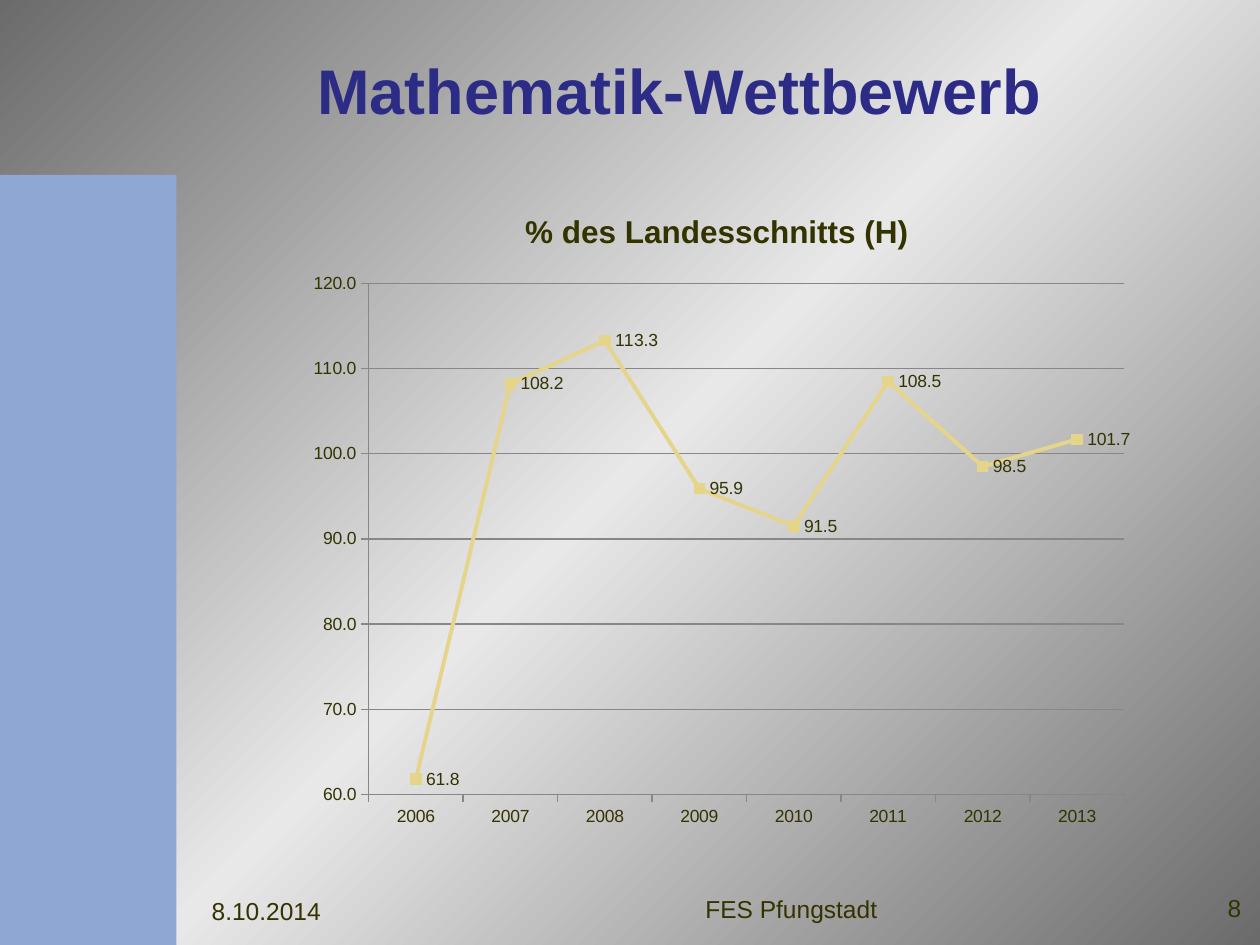
"""Slide with a line chart of mathematics competition results by year."""
from copy import deepcopy
from dataclasses import dataclass

from lxml.etree import SubElement
from pptx import Presentation
from pptx.chart.data import CategoryChartData
from pptx.dml.color import RGBColor
from pptx.enum.chart import XL_CHART_TYPE as Chart
from pptx.enum.chart import XL_LABEL_POSITION as LabelPos
from pptx.enum.chart import XL_MARKER_STYLE as Marker
from pptx.enum.chart import XL_TICK_MARK as Tick
from pptx.enum.shapes import MSO_SHAPE as Shape
from pptx.enum.text import MSO_ANCHOR as Anchor
from pptx.enum.text import PP_ALIGN as Align
from pptx.oxml.ns import qn
from pptx.util import Pt


@dataclass(frozen=True)
class Theme:
    font: str = "Arial"
    text: str = "333300"
    heading: str = "2C2C86"
    sidebar: str = "8FA7D3"
    series: str = "E5D58A"
    grid: str = "878787"
    bg_edge: str = "6B6B6B"
    bg_middle: str = "E8E8E8"
    heading_pt: int = 36
    chart_title_pt: int = 18
    footer_pt: int = 14
    chart_pt: int = 10


@dataclass(frozen=True)
class Box:
    left: float
    top: float
    width: float
    height: float

    def emu(self) -> tuple:
        return Pt(self.left), Pt(self.top), Pt(self.width), Pt(self.height)


@dataclass(frozen=True)
class Label:
    text: str
    box: Box
    size: int
    color: str
    align: Align = Align.LEFT
    bold: bool = False
    indent: float = 0


THEME = Theme()
SIDEBAR = Box(0, 100, 100.8, 440)
CHART_BOX = Box(167, 105.84, 485.3, 374.4)
PLOT = {"x": 0.09, "y": 0.15, "w": 0.89, "h": 0.78}
LABELS = (
    Label("8.10.2014", Box(113.9, 501.1, 144, 38.9), THEME.footer_pt, THEME.text),
    Label("FES Pfungstadt", Box(334.1, 499.7, 236.2, 38.9), THEME.footer_pt,
          THEME.text, Align.CENTER),
    Label("8", Box(612, 499, 104.4, 39.6), THEME.footer_pt, THEME.text, Align.RIGHT),
    Label("Mathematik-Wettbewerb", Box(102.2, 5.8, 599.8, 90), THEME.heading_pt,
          THEME.heading, bold=True, indent=72),
)
SERIES_NAME = "% des Landesschnitts (H)"
RESULTS = {"2006": 61.8, "2007": 108.2, "2008": 113.3, "2009": 95.9,
           "2010": 91.5, "2011": 108.5, "2012": 98.5, "2013": 101.7}


def rgb(value: str) -> RGBColor:
    return RGBColor.from_string(value)


def style_font(font, size: int, color: str, bold: bool = False) -> None:
    font.name, font.size, font.bold = THEME.font, Pt(size), bold
    font.color.rgb = rgb(color)


def style_line(line, color: str, width: float) -> None:
    line.color.rgb = rgb(color)
    line.width = Pt(width)


def paint_background(s) -> None:
    fill = s.background.fill
    fill.gradient()
    fill.gradient_angle = 315
    first, middle = fill.gradient_stops
    first.color.rgb, first.position = rgb(THEME.bg_edge), 0
    middle.color.rgb, middle.position = rgb(THEME.bg_middle), 0.5
    stops = next(s.element.iter(qn("a:gsLst")))
    last = deepcopy(stops[0])
    last.set("pos", "100000")
    stops.append(last)


def add_sidebar(s, box: Box) -> None:
    sp = s.shapes.add_shape(Shape.RECTANGLE, *box.emu())
    sp.shadow.inherit = False
    sp.fill.solid()
    sp.fill.fore_color.rgb = rgb(THEME.sidebar)
    sp.line.fill.background()


def add_label(s, label: Label) -> None:
    tf = s.shapes.add_textbox(*label.box.emu()).text_frame
    tf.word_wrap = True
    tf.vertical_anchor = Anchor.MIDDLE
    tf.margin_left = Pt(7.2 + label.indent)
    p = tf.paragraphs[0]
    p.alignment = label.align
    r = p.add_run()
    r.text = label.text
    style_font(r.font, label.size, label.color, label.bold)


def place_plot(chart) -> None:
    plot_area = next(chart.element.iter(qn("c:plotArea")))
    for old in plot_area.findall(qn("c:layout")):
        plot_area.remove(old)
    layout = SubElement(plot_area, qn("c:layout"))
    plot_area.insert(0, layout)
    manual = SubElement(layout, qn("c:manualLayout"))
    settings = {"layoutTarget": "inner", "xMode": "edge", "yMode": "edge", **PLOT}
    for tag, value in settings.items():
        SubElement(manual, qn(f"c:{tag}")).set("val", str(value))


def add_results_chart(s, box: Box) -> None:
    data = CategoryChartData(number_format="0.0")
    data.categories = list(RESULTS)
    data.add_series(SERIES_NAME, list(RESULTS.values()))
    chart = s.shapes.add_chart(Chart.LINE_MARKERS, *box.emu(), data).chart
    style_font(chart.font, THEME.chart_pt, THEME.text)
    chart.has_legend = False
    chart.has_title = True
    r = chart.chart_title.text_frame.paragraphs[0].add_run()
    r.text = SERIES_NAME
    style_font(r.font, THEME.chart_title_pt, THEME.text, True)
    chart.chart_title.include_in_layout = False
    place_plot(chart)

    values = chart.value_axis
    values.minimum_scale, values.maximum_scale, values.major_unit = 60, 120, 10
    values.has_major_gridlines = True
    style_line(values.major_gridlines.format.line, THEME.grid, 0.75)
    values.tick_labels.number_format = "0.0"
    values.tick_labels.number_format_is_linked = False
    for axis in (chart.category_axis, values):
        axis.major_tick_mark = Tick.OUTSIDE
        axis.minor_tick_mark = Tick.NONE
        style_line(axis.format.line, THEME.grid, 0.75)

    plot = chart.plots[0]
    plot.vary_by_categories = False
    series = plot.series[0]
    series.smooth = False
    style_line(series.format.line, THEME.series, 2.25)
    marker = series.marker
    marker.style, marker.size = Marker.SQUARE, 6
    marker.format.fill.solid()
    marker.format.fill.fore_color.rgb = rgb(THEME.series)
    marker.format.line.color.rgb = rgb(THEME.series)
    labels = series.data_labels
    labels.show_value = True
    labels.number_format, labels.number_format_is_linked = "0.0", False
    labels.position = LabelPos.RIGHT
    style_font(labels.font, THEME.chart_pt, THEME.text)


def main() -> None:
    prs = Presentation()
    prs.slide_width, prs.slide_height = Pt(720), Pt(540)
    s = prs.slides.add_slide(prs.slide_layouts[6])
    paint_background(s)
    add_sidebar(s, SIDEBAR)
    for label in LABELS:
        add_label(s, label)
    add_results_chart(s, CHART_BOX)
    prs.save("out.pptx")


if __name__ == "__main__":
    main()
